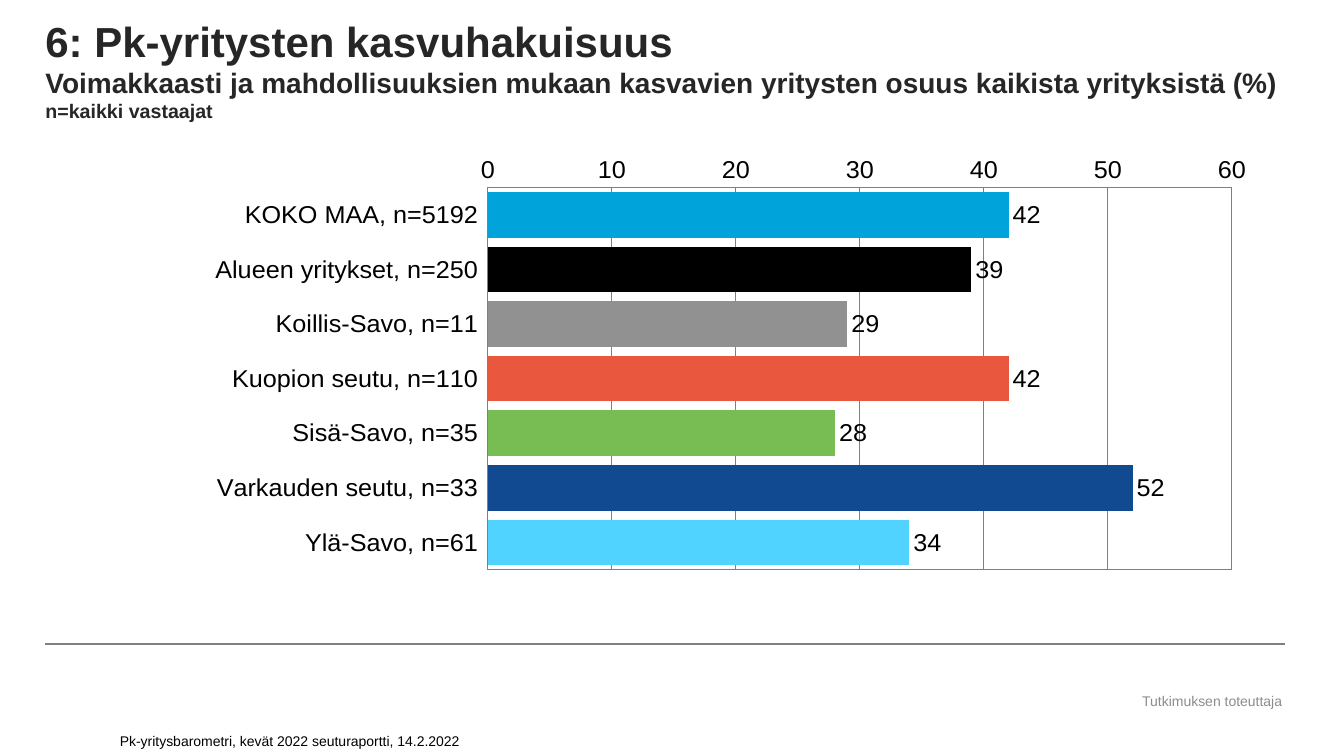
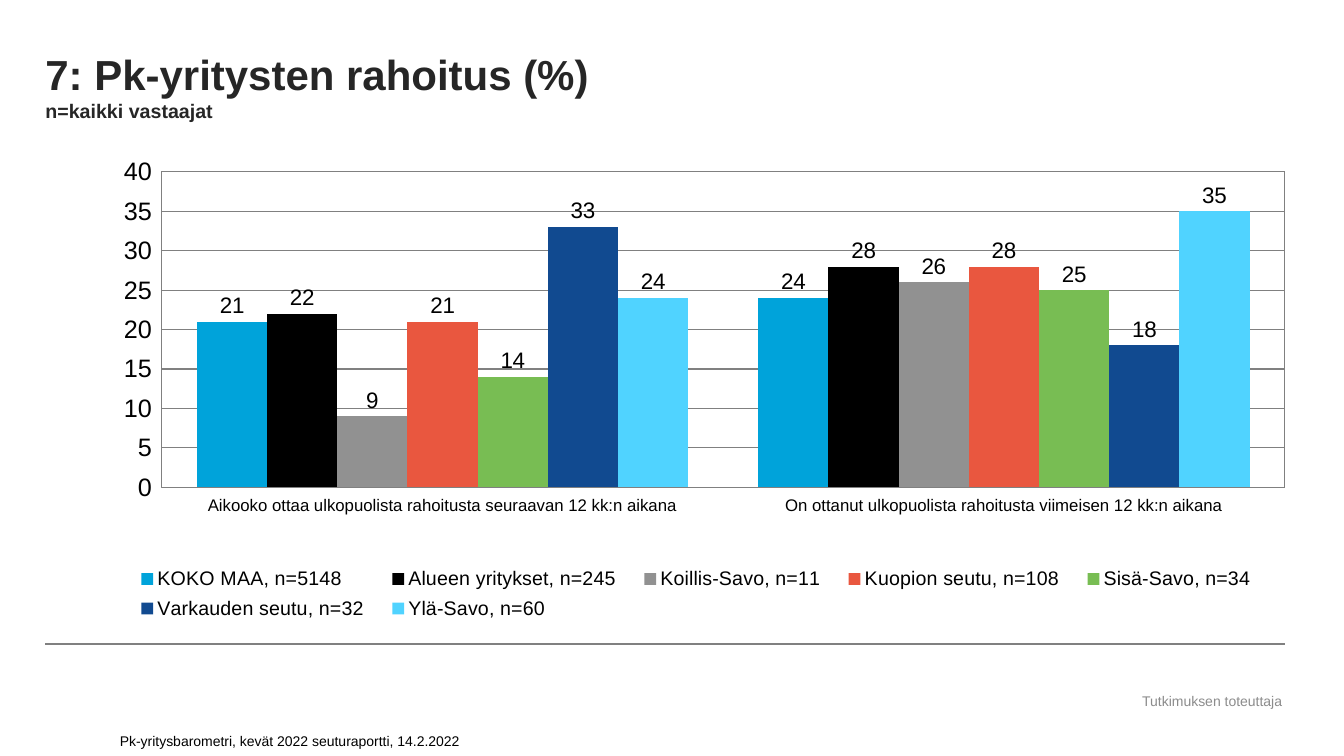
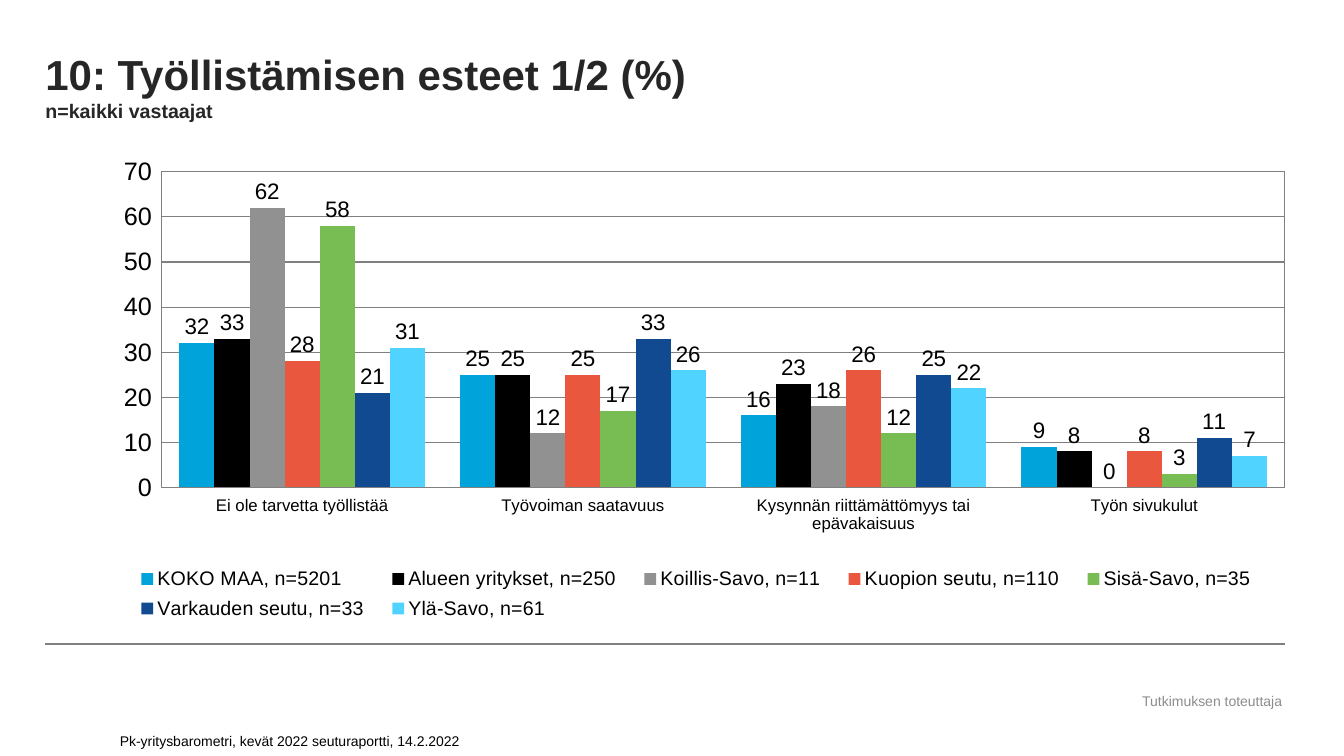
from dataclasses import dataclass

import lxml.etree
import pptx
import pptx.chart.chart
import pptx.chart.data
import pptx.dml.color
import pptx.enum.chart
import pptx.enum.shapes
import pptx.enum.text
import pptx.oxml.ns
import pptx.presentation
import pptx.slide
import pptx.util

Pt = pptx.util.Pt
RGBColor = pptx.dml.color.RGBColor
qn = pptx.oxml.ns.qn

FONT = "Arial"
BLACK = RGBColor(0x00, 0x00, 0x00)
TITLE_COLOR = RGBColor(0x26, 0x26, 0x26)
FOOTER_COLOR = RGBColor(0x8C, 0x8C, 0x8C)
LINE_COLOR = RGBColor(0x80, 0x80, 0x80)

LEFT, WIDTH = 32.4, 885.6
TITLE_HEIGHT = 87.8
CHART_TOP, CHART_HEIGHT = 111.6, 339.8
RULE_TOP = 460
SUBTITLE = "n=kaikki vastaajat"


@dataclass(frozen=True)
class Region:
    name: str
    color: RGBColor


REGIONS = [
    Region("KOKO MAA", RGBColor(0x00, 0xA3, 0xDA)),
    Region("Alueen yritykset", BLACK),
    Region("Koillis-Savo", RGBColor(0x91, 0x91, 0x91)),
    Region("Kuopion seutu", RGBColor(0xE9, 0x57, 0x3F)),
    Region("Sisä-Savo", RGBColor(0x78, 0xBD, 0x53)),
    Region("Varkauden seutu", RGBColor(0x11, 0x4A, 0x90)),
    Region("Ylä-Savo", RGBColor(0x50, 0xD3, 0xFF)),
]


@dataclass(frozen=True)
class TitleLine:
    text: str
    size: float


@dataclass(frozen=True)
class Box:
    x: float
    y: float
    w: float
    h: float


@dataclass(frozen=True)
class Survey:
    title: list[TitleLine]
    counts: list[int]
    answers: dict[str, list[int]]
    axis_max: int
    axis_step: int

    def region_labels(self) -> list[str]:
        return [f"{r.name}, n={n}" for r, n in zip(REGIONS, self.counts)]


GROWTH = Survey(
    [
        TitleLine("6: Pk-yritysten kasvuhakuisuus", 30),
        TitleLine(
            "Voimakkaasti ja mahdollisuuksien mukaan kasvavien yritysten "
            "osuus kaikista yrityksistä (%)",
            20,
        ),
        TitleLine(SUBTITLE, 14),
    ],
    [5192, 250, 11, 110, 35, 33, 61],
    {"Series 1": [42, 39, 29, 42, 28, 52, 34]},
    60,
    10,
)
FUNDING = Survey(
    [TitleLine("7: Pk-yritysten rahoitus (%)", 30), TitleLine(SUBTITLE, 14)],
    [5148, 245, 11, 108, 34, 32, 60],
    {
        "Aikooko ottaa ulkopuolista rahoitusta seuraavan 12 kk:n aikana": [21, 22, 9, 21, 14, 33, 24],
        "On ottanut ulkopuolista rahoitusta viimeisen 12 kk:n aikana": [24, 28, 26, 28, 25, 18, 35],
    },
    40,
    5,
)
HIRING = Survey(
    [TitleLine("10: Työllistämisen esteet 1/2 (%)", 30), TitleLine(SUBTITLE, 14)],
    [5201, 250, 11, 110, 35, 33, 61],
    {
        "Ei ole tarvetta työllistää": [32, 33, 62, 28, 58, 21, 31],
        "Työvoiman saatavuus": [25, 25, 12, 25, 17, 33, 26],
        "Kysynnän riittämättömyys tai epävakaisuus": [16, 23, 18, 26, 12, 25, 22],
        "Työn sivukulut": [9, 8, 0, 8, 3, 11, 7],
    },
    70,
    10,
)


def add_label(
    s: pptx.slide.Slide,
    text: str,
    box: Box,
    color: RGBColor,
    anchor: pptx.enum.text.MSO_ANCHOR,
    align: pptx.enum.text.PP_ALIGN,
):
    sp = s.shapes.add_textbox(Pt(box.x), Pt(box.y), Pt(box.w), Pt(box.h))
    tf = sp.text_frame
    tf.word_wrap = True
    tf.vertical_anchor = anchor
    tf.text = text
    p = tf.paragraphs[0]
    p.alignment = align
    font = p.runs[0].font
    font.name, font.size, font.color.rgb = FONT, Pt(10), color
    return sp


def move_frame_to_layout(s: pptx.slide.Slide) -> None:
    credit = add_label(
        s,
        "Tutkimuksen toteuttaja",
        Box(803.5, 491, 124.6, 18.7),
        FOOTER_COLOR,
        pptx.enum.text.MSO_ANCHOR.MIDDLE,
        pptx.enum.text.PP_ALIGN.CENTER,
    )
    rule = s.shapes.add_connector(
        pptx.enum.shapes.MSO_CONNECTOR.STRAIGHT,
        Pt(LEFT), Pt(RULE_TOP), Pt(LEFT + WIDTH), Pt(RULE_TOP),
    )
    rule.line.color.rgb = LINE_COLOR
    rule.line.width = Pt(1.5)
    lxml.etree.SubElement(rule._element.spPr, qn("a:effectLst"))
    for sp in (credit, rule):
        s.slide_layout.shapes._spTree.append(sp._element)


def add_title(s: pptx.slide.Slide, lines: list[TitleLine]) -> None:
    sp = s.shapes.title
    sp.left, sp.top, sp.width, sp.height = Pt(LEFT), Pt(0), Pt(WIDTH), Pt(TITLE_HEIGHT)
    tf = sp.text_frame
    tf.margin_left = tf.margin_top = tf.margin_right = tf.margin_bottom = 0
    tf.vertical_anchor = pptx.enum.text.MSO_ANCHOR.BOTTOM
    tf.auto_size = pptx.enum.text.MSO_AUTO_SIZE.NONE
    tf.word_wrap = True
    tf.text = "\n".join(line.text for line in lines)
    for p, line in zip(tf.paragraphs, lines):
        p.alignment = pptx.enum.text.PP_ALIGN.LEFT
        p.space_before = Pt(0)
        font = p.runs[0].font
        font.name, font.size, font.bold = FONT, Pt(line.size), True
        font.color.rgb = TITLE_COLOR


def set_layout(parent, index: int, box: Box, inner: bool = False) -> None:
    for old in parent.findall(qn("c:layout")):
        parent.remove(old)
    layout = lxml.etree.Element(qn("c:layout"))
    manual = lxml.etree.SubElement(layout, qn("c:manualLayout"))
    values = {"layoutTarget": "inner"} if inner else {}
    values |= {"xMode": "edge", "yMode": "edge"}
    values |= {"x": box.x, "y": box.y, "w": box.w, "h": box.h}
    for tag, value in values.items():
        lxml.etree.SubElement(manual, qn(f"c:{tag}")).set("val", str(value))
    parent.insert(index, layout)


def frame_plot(chart: pptx.chart.chart.Chart, box: Box) -> None:
    area = chart._chartSpace.chart.plotArea
    set_layout(area, 0, box, inner=True)
    props = lxml.etree.SubElement(area, qn("c:spPr"))
    lxml.etree.SubElement(props, qn("a:noFill"))
    line = lxml.etree.SubElement(props, qn("a:ln"), w=str(Pt(0.75)))
    fill = lxml.etree.SubElement(line, qn("a:solidFill"))
    lxml.etree.SubElement(fill, qn("a:srgbClr"), val=str(LINE_COLOR))


def paint(fmt, color: RGBColor) -> None:
    fmt.fill.solid()
    fmt.fill.fore_color.rgb = color
    fmt.line.fill.background()


def add_chart(
    s: pptx.slide.Slide,
    survey: Survey,
    kind: pptx.enum.chart.XL_CHART_TYPE,
    categories: list[str],
    series: dict[str, list[int]],
    plot_box: Box,
    gap: int,
    label_size: float,
) -> pptx.chart.chart.Chart:
    data = pptx.chart.data.CategoryChartData()
    data.categories = categories
    for name, values in series.items():
        data.add_series(name, values)
    chart = s.shapes.add_chart(
        kind, Pt(LEFT), Pt(CHART_TOP), Pt(WIDTH), Pt(CHART_HEIGHT), data
    ).chart
    chart.has_title = False
    chart.has_legend = False
    chart.font.name, chart.font.size = FONT, Pt(18)
    chart.font.color.rgb = BLACK

    value_axis = chart.value_axis
    value_axis.minimum_scale, value_axis.maximum_scale = 0, survey.axis_max
    value_axis.major_unit = survey.axis_step
    value_axis.has_major_gridlines = True
    value_axis.major_gridlines.format.line.color.rgb = LINE_COLOR
    for axis in (chart.category_axis, value_axis):
        axis.major_tick_mark = pptx.enum.chart.XL_TICK_MARK.NONE
        axis.tick_label_position = pptx.enum.chart.XL_TICK_LABEL_POSITION.LOW
        axis.format.line.color.rgb = LINE_COLOR

    plot = chart.plots[0]
    plot.gap_width = gap
    plot.overlap = 0
    plot.vary_by_categories = False
    plot.has_data_labels = True
    labels = plot.data_labels
    labels.show_value = True
    labels.position = pptx.enum.chart.XL_LABEL_POSITION.OUTSIDE_END
    labels.number_format = "#,##0"
    labels.number_format_is_linked = False
    labels.font.name, labels.font.size = FONT, Pt(label_size)
    labels.font.color.rgb = BLACK
    frame_plot(chart, plot_box)
    return chart


def add_region_bars(s: pptx.slide.Slide, survey: Survey) -> None:
    chart = add_chart(
        s, survey, pptx.enum.chart.XL_CHART_TYPE.BAR_CLUSTERED,
        survey.region_labels(), survey.answers,
        Box(0.357, 0.033, 0.6, 0.832), 20, 18,
    )
    chart.category_axis.reverse_order = True
    chart.category_axis.crosses = pptx.enum.chart.XL_AXIS_CROSSES.MAXIMUM
    chart.value_axis.tick_label_position = pptx.enum.chart.XL_TICK_LABEL_POSITION.NEXT_TO_AXIS
    bars = chart.plots[0].series[0]
    paint(bars.format, REGIONS[0].color)
    for i, region in enumerate(REGIONS):
        paint(bars.points[i].format, region.color)


def add_answer_columns(s: pptx.slide.Slide, survey: Survey) -> None:
    by_region = [list(values) for values in zip(*survey.answers.values())]
    chart = add_chart(
        s, survey, pptx.enum.chart.XL_CHART_TYPE.COLUMN_CLUSTERED,
        list(survey.answers), dict(zip(survey.region_labels(), by_region)),
        Box(0.094, 0.033, 0.906, 0.663), 100, 16,
    )
    chart.category_axis.tick_labels.font.size = Pt(12)
    for columns, region in zip(chart.plots[0].series, REGIONS):
        paint(columns.format, region.color)
    chart.has_legend = True
    legend = chart.legend
    legend.position = pptx.enum.chart.XL_LEGEND_POSITION.RIGHT
    legend.include_in_layout = False
    legend.font.name, legend.font.size = FONT, Pt(14)
    legend.font.color.rgb = BLACK
    set_layout(legend._element, 1, Box(0.06, 0.85, 0.93, 0.14))


def add_slide(prs: pptx.presentation.Presentation, survey: Survey) -> pptx.slide.Slide:
    s = prs.slides.add_slide(prs.slide_layouts[5])
    add_title(s, survey.title)
    add_label(
        s,
        "Pk-yritysbarometri, kevät 2022 seuturaportti, 14.2.2022",
        Box(78.5, 513.4, 389.5, 25.2),
        BLACK,
        pptx.enum.text.MSO_ANCHOR.BOTTOM,
        pptx.enum.text.PP_ALIGN.LEFT,
    )
    return s


def main() -> None:
    prs = pptx.Presentation()
    prs.slide_width, prs.slide_height = Pt(960), Pt(540)
    s = add_slide(prs, GROWTH)
    move_frame_to_layout(s)
    add_region_bars(s, GROWTH)
    for survey in (FUNDING, HIRING):
        add_answer_columns(add_slide(prs, survey), survey)
    prs.save("out.pptx")


if __name__ == "__main__":
    main()
